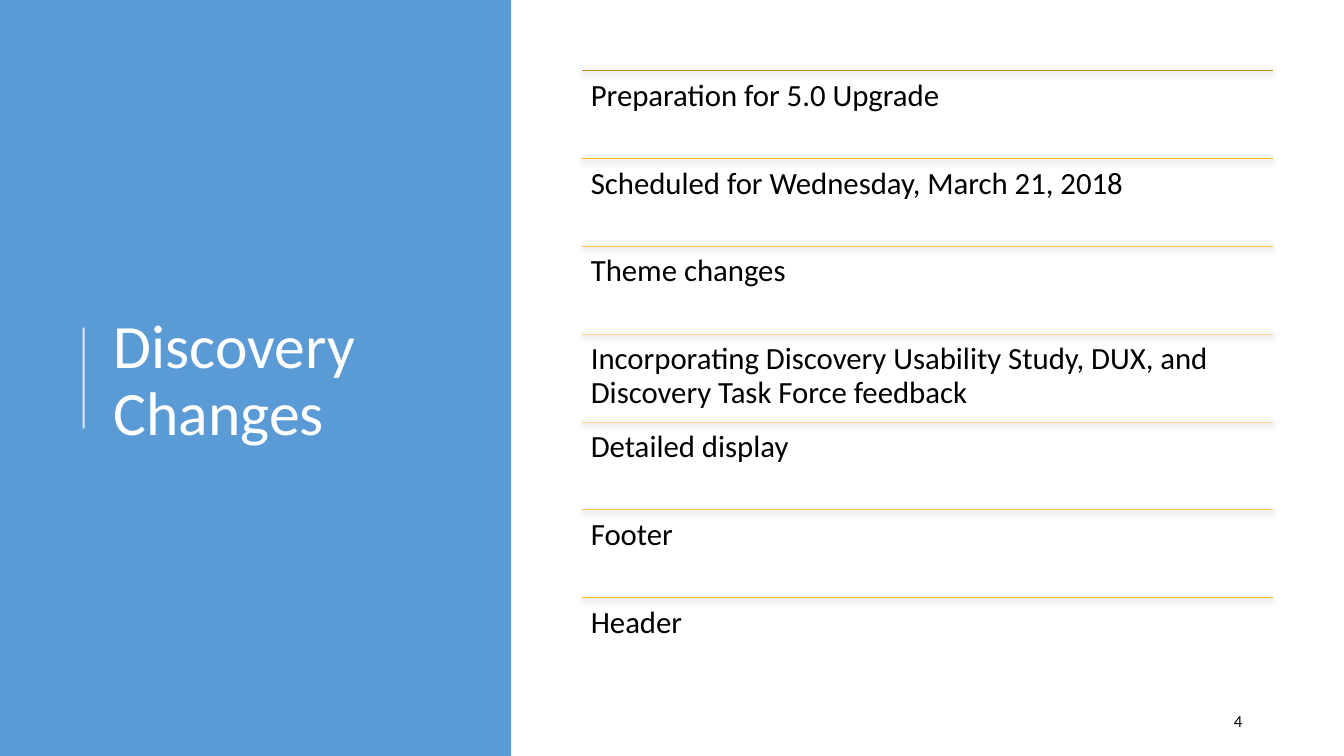
from lxml import etree
from pptx import Presentation
from pptx import util as u
from pptx.dml.color import RGBColor
from pptx.enum import shapes, text
from pptx.oxml import ns

WHITE = RGBColor(0xFF, 0xFF, 0xFF)
BLACK = RGBColor(0x00, 0x00, 0x00)
BLUE = RGBColor(0x5B, 0x9B, 0xD5)
DARK_GOLD = RGBColor(0xBD, 0x8E, 0x00)
GOLD = RGBColor(0xFF, 0xB5, 0x04)
LIGHT_GOLD = RGBColor(0xFF, 0xC1, 0x4A)
PALE_GOLD = RGBColor(0xFF, 0xD4, 0x91)

ITEMS = [
    ("Preparation for 5.0 Upgrade", DARK_GOLD),
    ("Scheduled for Wednesday, March 21, 2018", GOLD),
    ("Theme changes", LIGHT_GOLD),
    ("Incorporating Discovery Usability Study, DUX, and "
     "Discovery Task Force feedback", PALE_GOLD),
    ("Detailed display", PALE_GOLD),
    ("Footer", LIGHT_GOLD),
    ("Header", GOLD),
]

# List grid
LEFT, WIDTH = 5.77, 6.86
TOP, BOTTOM = 0.7, 6.8
ROW = (BOTTOM - TOP) / len(ITEMS)


def set_all(target, values):
    for name, value in values.items():
        setattr(target, name, value)


def add_child(parent, tag, **attributes):
    return etree.SubElement(parent, ns.qn(tag), attributes)


def add_panel(page, left, top, width, height, color):
    panel = page.shapes.add_shape(
        shapes.MSO_SHAPE.RECTANGLE, *map(u.Inches, (left, top, width, height)))
    panel.shadow.inherit = False
    panel.fill.solid()
    panel.fill.fore_color.rgb = color
    panel.line.fill.background()


def add_rule(page, start, end, color, weight, opacity=None, shadow=False):
    rule = page.shapes.add_connector(
        shapes.MSO_CONNECTOR.STRAIGHT, *map(u.Inches, start + end))
    rule.line.color.rgb = color
    rule.line.width = u.Pt(weight)
    if opacity:
        line_color = rule._element.spPr.find(".//" + ns.qn("a:srgbClr"))
        add_child(line_color, "a:alpha", val=str(opacity * 1000))
    effects = add_child(rule._element.spPr, "a:effectLst")
    if shadow:
        outer = add_child(effects, "a:outerShdw", blurRad=str(u.Pt(4.5)),
                          dist=str(u.Pt(1.5)), dir="5400000",
                          algn="ctr", rotWithShape="0")
        shade = add_child(outer, "a:srgbClr", val=str(BLACK))
        add_child(shade, "a:alpha", val="63000")


def add_text(page, wording, place, size, color=BLACK, frame=None, layout=None):
    box = page.shapes.add_textbox(*map(u.Inches, place))
    set_all(box.text_frame, {"word_wrap": True, **(frame or {})})
    para = box.text_frame.paragraphs[0]
    set_all(para, layout or {})
    span = para.add_run()
    span.text = wording
    set_all(span.font, {"name": "Calibri", "size": u.Pt(size)})
    span.font.color.rgb = color


def add_list(page):
    sides = ("left", "top", "right", "bottom")
    frame = {f"margin_{side}": u.Inches(0.09) for side in sides}
    for row, (wording, color) in enumerate(ITEMS):
        top = TOP + row * ROW
        add_rule(page, (LEFT, top), (LEFT + WIDTH, top), color, 0.5, shadow=True)
        add_text(page, wording, (LEFT, top, WIDTH, ROW), 22,
                 frame=frame, layout={"line_spacing": 0.9})


def main():
    deck = Presentation()
    set_all(deck, {"slide_width": u.Inches(13.33), "slide_height": u.Inches(7.5)})
    page = deck.slides.add_slide(deck.slide_layouts[6])
    middle = {"vertical_anchor": text.MSO_ANCHOR.MIDDLE}

    # Title panel
    add_panel(page, 0, 0, 5.07, 7.5, BLUE)
    add_rule(page, (0.83, 4.25), (0.83, 3.25), WHITE, 1.5, opacity=80)
    add_text(page, "Discovery Changes", (1.03, 0.78, 3.69, 6.02), 44, WHITE,
             frame=middle, layout={"line_spacing": 0.9})

    # Ruled list
    add_list(page)

    # Slide number
    add_text(page, "4", (9.42, 6.95, 3, 0.4), 12, frame=middle,
             layout={"alignment": text.PP_ALIGN.RIGHT})

    deck.save("out.pptx")


if __name__ == "__main__":
    main()
